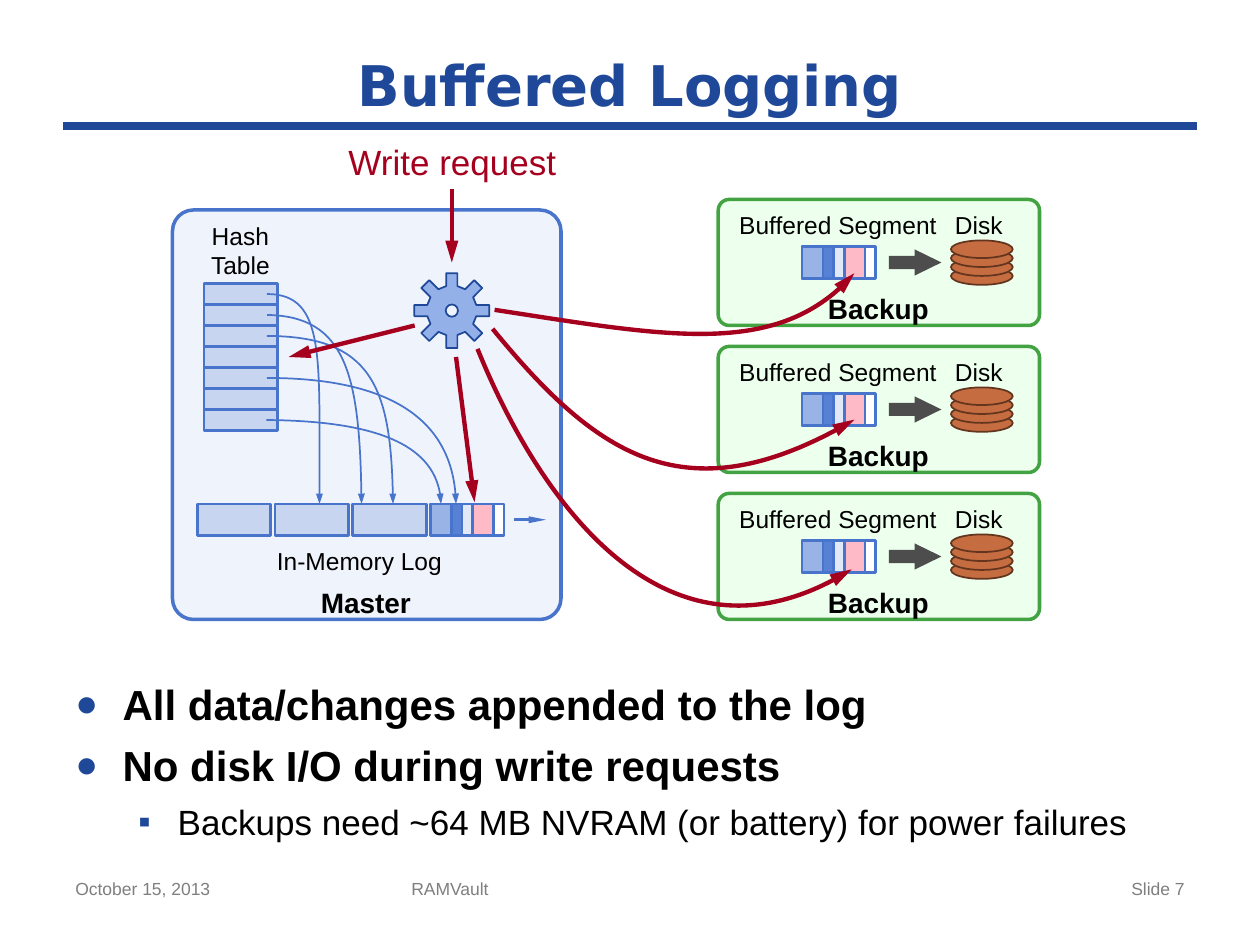
from math import cos, pi, sin

from lxml import etree
from pptx import Presentation
from pptx import util as u
from pptx.dml.color import RGBColor
from pptx.enum import shapes, text
from pptx.oxml.ns import qn

NAVY, BLUE, PALE, ICE = "1F4899", "4974CB", "C7D5F1", "EFF3FB"
RED, GREEN, BLACK, GRAY = "A5001E", "43A343", "000000", "7F7F7F"
CENTER, RIGHT = text.PP_ALIGN.CENTER, text.PP_ALIGN.RIGHT
KIND = shapes.MSO_SHAPE

# Width and length of arrowheads
SMALL_HEAD, SLIM_HEAD, LARGE_HEAD = ("sm", "med"), ("sm", "lg"), ("med", "lg")

# Offset, width and colour of the entries in an open log segment
ENTRIES = [(0, 12, "9AB3E6"), (12, 6, "5781D5"), (18, 6, "E1E8F7"), (24, 12, "FFBAC7")]

# Start, two control points and end of each curve
HASH_CURVES = [
    [(152.2, 240), (214.6, 240.5), (251.3, 255.6), (252, 288)],
    [(152.6, 168), (186.5, 168), (182.2, 206.6), (182.6, 288)],
    [(152.6, 192), (212.4, 192), (223.9, 223.2), (224.6, 288)],
    [(152.6, 216), (220.3, 216), (259.9, 239.8), (260.6, 288)],
    [(152.6, 180), (197.3, 180.7), (205.9, 215.3), (206.6, 288)],
]
BACKUP_CURVES = [
    [(282.6, 177.1), (376.6, 191.5), (445.7, 205.2), (488.2, 156.2)],
    [(281.5, 187.9), (339.8, 259.2), (393.1, 295.9), (488.2, 239.8)],
    [(272.9, 199.4), (308.9, 288), (383.8, 390.2), (486.7, 325.4)],
]
WRITE_ARROWS = [
    (258.2, 108, 258.2, 150),
    (237, 186, 165, 204),
    (260.6, 204, 271.2, 287),
]


def color(hex_string):
    return RGBColor.from_string(hex_string)


def set_line(item, stroke, weight):
    item.line.color.rgb = color(stroke)
    item.line.width = u.Pt(weight)


def paint(shape, fill, stroke, weight):
    shape.shadow.inherit = False
    if fill:
        shape.fill.solid()
        shape.fill.fore_color.rgb = color(fill)
    else:
        shape.fill.background()
    if stroke:
        set_line(shape, stroke, weight)
    else:
        shape.line.fill.background()


def add_arrowhead(item, head):
    ln = item.element.spPr.find(qn("a:ln"))
    etree.SubElement(ln, qn("a:tailEnd"), type="triangle", w=head[0], len=head[1])


def add_box(parent, kind, box, fill, stroke=None, weight=1.5, adjust=()):
    shape = parent.add_shape(kind, *map(u.Pt, box))
    paint(shape, fill, stroke, weight)
    for i, value in enumerate(adjust):
        shape.adjustments[i] = value


def add_line(parent, ends, stroke=BLUE, weight=1.5, head=None):
    line = parent.add_connector(shapes.MSO_CONNECTOR.STRAIGHT, *map(u.Pt, ends))
    set_line(line, stroke, weight)
    if head:
        add_arrowhead(line, head)
    etree.SubElement(line.element.spPr, qn("a:effectLst"))


def add_outline(parent, points, fill, stroke, weight, close):
    start, *rest = [(u.Pt(x), u.Pt(y)) for x, y in points]
    builder = parent.build_freeform(*start, scale=1.0)
    builder.add_line_segments(rest, close=close)
    shape = builder.convert_to_shape()
    paint(shape, fill, stroke, weight)
    return shape


def add_curve(parent, controls, stroke, weight, head, steps=24):
    # Points along the curve give the size of its box
    points = []
    for i in range(steps + 1):
        t = i / steps
        weights = ((1 - t) ** 3, 3 * t * (1 - t) ** 2, 3 * t * t * (1 - t), t ** 3)
        points.append([sum(w * c for w, c in zip(weights, axis))
                       for axis in zip(*controls)])
    shape = add_outline(parent, points, None, stroke, weight, False)
    # One Bézier segment takes the place of the straight steps
    outline = next(shape.element.iter(qn("a:path")))
    for step in outline.findall(qn("a:lnTo")):
        outline.remove(step)
    bezier = etree.SubElement(outline, qn("a:cubicBezTo"))
    for x, y in controls[1:]:
        etree.SubElement(bezier, qn("a:pt"), x=str(u.Pt(x) - shape.left),
                         y=str(u.Pt(y) - shape.top))
    add_arrowhead(shape, head)


def set_font(paragraph, size, ink, bold=False, name="Arial"):
    font = paragraph.font
    font.size, font.bold, font.name = u.Pt(size), bold, name
    font.color.rgb = color(ink)


def add_text(parent, box, words, size, ink=BLACK, bold=False, align=None, name="Arial"):
    frame = parent.add_textbox(*map(u.Pt, box)).text_frame
    frame.word_wrap = True
    frame.text = words
    frame.paragraphs[0].alignment = align
    set_font(frame.paragraphs[0], size, ink, bold, name)
    return frame


def add_label(parent, box, words, size=14, bold=False):
    frame = add_text(parent, box, words, size, bold=bold, align=CENTER)
    frame.margin_left = frame.margin_right = frame.margin_top = frame.margin_bottom = 0
    frame.word_wrap = "\v" in words
    frame.auto_size = text.MSO_AUTO_SIZE.SHAPE_TO_FIT_TEXT


def add_bullet(paragraph, words, level, mark, percent, margin, hang, size):
    paragraph.text = words
    paragraph.level = level
    paragraph.space_before = u.Pt(6)
    props = paragraph._p.get_or_add_pPr()
    props.set("marL", str(u.Pt(margin)))
    props.set("indent", str(-u.Pt(hang)))
    ink = etree.SubElement(props, qn("a:buClr"))
    etree.SubElement(ink, qn("a:srgbClr"), val=NAVY)
    etree.SubElement(props, qn("a:buSzPct"), val=str(percent * 1000))
    etree.SubElement(props, qn("a:buFont"), typeface="Arial")
    etree.SubElement(props, qn("a:buChar"), char=mark)
    set_font(paragraph, size, BLACK, bold=level == 0)


def add_segment(parent, left, top):
    add_box(parent, KIND.RECTANGLE, (left, top, 42, 18), "FFFFFF", BLUE)
    for offset, width, fill in ENTRIES:
        add_box(parent, KIND.RECTANGLE, (left + offset, top, width, 18), fill, BLUE)


def add_backup(slide, top):
    parts = slide.shapes.add_group_shape().shapes
    add_box(parts, KIND.ROUNDED_RECTANGLE, (410.4, top, 183.6, 72), "EDFFED", GREEN, 2, [0.087])
    add_segment(parts, 458.4, top + 27)
    add_line(parts, (458.4, top + 27, 458.4, top + 45))
    for layer in range(4):
        add_box(parts, KIND.OVAL, (543.4, top + 38.7 - 5.1 * layer, 35.3, 10.1),
                "C56D41", "64351E", 1)
    add_label(parts, (545.6, top + 6, 27.4, 17), "Disk")
    add_label(parts, (472.8, top + 52.5, 58.3, 19.4), "Backup", 16, True)
    add_label(parts, (422.4, top + 6, 113, 17), "Buffered Segment")
    add_box(parts, KIND.RIGHT_ARROW, (508, top + 28.5, 30, 15), "4D4D4D", adjust=[0.5, 1.021])


def add_gear(slide, x, y, teeth=8):
    parts = slide.shapes.add_group_shape().shapes
    points = []
    for tooth in range(teeth):
        a = 2 * pi * tooth / teeth
        for across, out in [(-3.2, 14), (-3.2, 21.4), (3.2, 21.4), (3.2, 14)]:
            points.append((x + across * cos(a) + out * sin(a),
                           y + across * sin(a) - out * cos(a)))
    add_outline(parts, points, "94B0E8", NAVY, 1, True)
    add_box(parts, KIND.OVAL, (x - 3.5, y - 3.5, 7, 7), ICE, NAVY, 1)


def add_master(slide):
    parts = slide.shapes
    add_box(parts, KIND.ROUNDED_RECTANGLE, (98.6, 120, 222, 234), ICE, BLUE, 2, [0.054])
    add_label(parts, (183.2, 334.5, 51.8, 19.4), "Master", 16, True)
    add_label(parts, (157.4, 312, 96, 17), "In-Memory Log")
    add_label(parts, (116.4, 126, 42, 34), "Hash\vTable")
    # Hash table with seven rows
    add_box(parts, KIND.RECTANGLE, (116.6, 162, 42, 84), PALE, BLUE)
    for row in range(1, 7):
        add_line(parts, (116.6, 162 + 12 * row, 158.6, 162 + 12 * row))
    add_gear(slide, 258.2, 177.5)
    # Log: three full segments and the open one
    log = parts.add_group_shape().shapes
    add_segment(log, 246, 288)
    for i in range(3):
        add_box(log, KIND.RECTANGLE, (112.8 + 44.4 * i, 288, 42, 18), PALE, BLUE)
    add_line(parts, (294, 297, 312, 297), head=SLIM_HEAD)


def main():
    deck = Presentation()
    deck.slide_width, deck.slide_height = u.Pt(720), u.Pt(540)
    slide = deck.slides.add_slide(deck.slide_layouts[6])
    parts = slide.shapes

    # Title and rule
    add_line(parts, (36, 72, 684, 72), NAVY, 4.5)
    title = add_text(parts, (36, 24, 648, 48), "Buffered Logging", 32, NAVY, True,
                     CENTER, "DejaVu Sans")
    title.vertical_anchor = text.MSO_ANCHOR.MIDDLE

    # Diagram
    add_master(slide)
    for i in range(3):
        add_backup(slide, 114 + 84 * i)
    for curve in HASH_CURVES:
        add_curve(parts, curve, BLUE, 1, SMALL_HEAD)
    for ends in WRITE_ARROWS:
        add_line(parts, ends, RED, 2.5, LARGE_HEAD)
    for curve in BACKUP_CURVES:
        add_curve(parts, curve, RED, 2.5, LARGE_HEAD)
    request = add_text(parts, (191.5, 76.8, 134, 31.5), "Write request", 20, RED, align=CENTER)
    request.word_wrap = False

    # Bullets
    body = parts.add_textbox(*map(u.Pt, (36, 384, 648, 98.6))).text_frame
    body.word_wrap = True
    main_style = (0, "●", 90, 27, 27, 24)
    add_bullet(body.paragraphs[0], "All data/changes appended to the log", *main_style)
    add_bullet(body.add_paragraph(), "No disk I/O during write requests", *main_style)
    add_bullet(body.add_paragraph(),
               "Backups need ~64 MB NVRAM (or battery) for power failures",
               1, "▪", 100, 58.5, 22.5, 20)

    # Footer
    add_text(parts, (36, 498, 168, 31), "October 15, 2013", 10, GRAY)
    add_text(parts, (228, 498, 270, 31), "RAMVault", 10, GRAY)
    add_text(parts, (516, 498, 168, 31), "Slide 7", 10, GRAY, align=RIGHT)
    deck.save("out.pptx")


if __name__ == "__main__":
    main()
